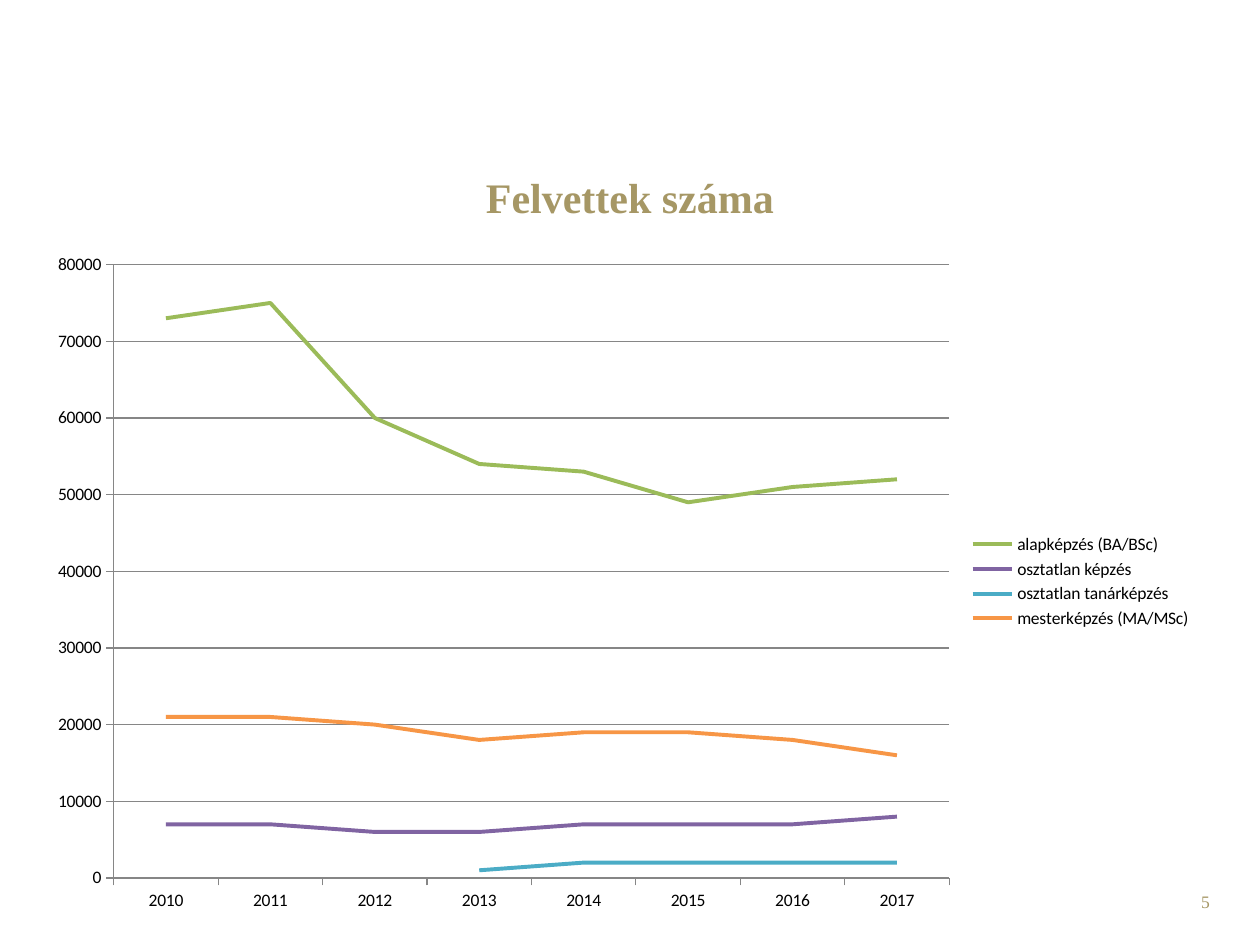
"""Build the slide on the number of admitted students by type of programme."""
import pptx
import pptx.chart.data
import pptx.dml.color
import pptx.enum.chart
import pptx.enum.text
import pptx.oxml
import pptx.oxml.ns
import pptx.util
from dataclasses import dataclass
from pptx.util import Inches


@dataclass(frozen=True)
class Theme:
    heading_font: str = "Times New Roman"
    chart_font: str = "Calibri"
    gold: str = "A69765"
    black: str = "000000"
    grid: str = "868686"
    green: str = "9BBB59"
    purple: str = "8064A2"
    teal: str = "4BACC6"
    orange: str = "F79646"
    title_size: int = 24
    small_size: int = 10
    series_width: float = 2.25
    grid_width: float = 0.75


theme = Theme()


def style_font(font, name, size, color, bold=False):
    font.name = name
    font.size = pptx.util.Pt(size)
    font.bold = bold
    font.color.rgb = pptx.dml.color.RGBColor.from_string(color)


def style_line(line, color, width):
    line.color.rgb = pptx.dml.color.RGBColor.from_string(color)
    line.width = pptx.util.Pt(width)


presentation = pptx.Presentation()
presentation.slide_width = Inches(10)
presentation.slide_height = Inches(7.5)
slide = presentation.slides.add_slide(presentation.slide_layouts[0])
subtitle = slide.placeholders[1].element
subtitle.getparent().remove(subtitle)

title = slide.shapes.title
title.left, title.top = Inches(0), Inches(1.31)
title.width, title.height = Inches(10), Inches(0.55)
title.text_frame.text = "Felvettek száma"
title.text_frame.vertical_anchor = pptx.enum.text.MSO_ANCHOR.MIDDLE
title.text_frame.margin_bottom = Inches(0.1)
heading = title.text_frame.paragraphs[0]
heading.alignment = pptx.enum.text.PP_ALIGN.CENTER
style_font(heading.font, theme.heading_font, theme.title_size, theme.gold, bold=True)

programmes = [
    ("alapképzés (BA/BSc)", theme.green,
     [73000, 75000, 60000, 54000, 53000, 49000, 51000, 52000]),
    ("osztatlan képzés", theme.purple,
     [7000, 7000, 6000, 6000, 7000, 7000, 7000, 8000]),
    ("osztatlan tanárképzés", theme.teal,
     [None, None, None, 1000, 2000, 2000, 2000, 2000]),
    ("mesterképzés (MA/MSc)", theme.orange,
     [21000, 21000, 20000, 18000, 19000, 19000, 18000, 16000]),
]
admissions = pptx.chart.data.CategoryChartData(number_format="General")
admissions.categories = [str(year) for year in range(2010, 2018)]
for name, _, counts in programmes:
    admissions.add_series(name, counts)

chart = slide.shapes.add_chart(
    pptx.enum.chart.XL_CHART_TYPE.LINE,
    Inches(0.35), Inches(1.94), Inches(9.21), Inches(5.35), admissions,
).chart
chart.has_title = False
style_font(chart.font, theme.chart_font, theme.small_size, theme.black)
chart.has_legend = True
chart.legend.position = pptx.enum.chart.XL_LEGEND_POSITION.RIGHT
chart.legend.include_in_layout = False
chart.plots[0].vary_by_categories = False

for series, (_, color, _) in zip(chart.plots[0].series, programmes):
    series.smooth = False
    series.marker.style = pptx.enum.chart.XL_MARKER_STYLE.NONE
    style_line(series.format.line, color, theme.series_width)

for axis in (chart.category_axis, chart.value_axis):
    axis.major_tick_mark = pptx.enum.chart.XL_TICK_MARK.OUTSIDE
    axis.minor_tick_mark = pptx.enum.chart.XL_TICK_MARK.NONE
    style_line(axis.format.line, theme.grid, theme.grid_width)
count_axis = chart.value_axis
count_axis.minimum_scale = 0
count_axis.maximum_scale = 80000
count_axis.major_unit = 10000
count_axis.has_major_gridlines = True
style_line(count_axis.major_gridlines.format.line, theme.grid, theme.grid_width)

plot_area = chart.element.chart.plotArea
for default_layout in plot_area.findall(pptx.oxml.ns.qn("c:layout")):
    plot_area.remove(default_layout)
plot_area.insert(0, pptx.oxml.parse_xml(
    f'<c:layout {pptx.oxml.ns.nsdecls("c")}><c:manualLayout>'
    '<c:layoutTarget val="inner"/><c:xMode val="edge"/><c:yMode val="edge"/>'
    '<c:x val="0.06"/><c:y val="0.03"/><c:w val="0.72"/><c:h val="0.91"/>'
    '</c:manualLayout></c:layout>'
))

page_number = slide.shapes.add_textbox(
    Inches(7.37), Inches(7.02), Inches(2.33), Inches(0.4)
).text_frame
page_number.word_wrap = True
page_number.vertical_anchor = pptx.enum.text.MSO_ANCHOR.TOP
page_number.text = "5"
page_line = page_number.paragraphs[0]
page_line.alignment = pptx.enum.text.PP_ALIGN.RIGHT
style_font(page_line.font, theme.heading_font, theme.small_size, theme.gold)

presentation.save("out.pptx")
